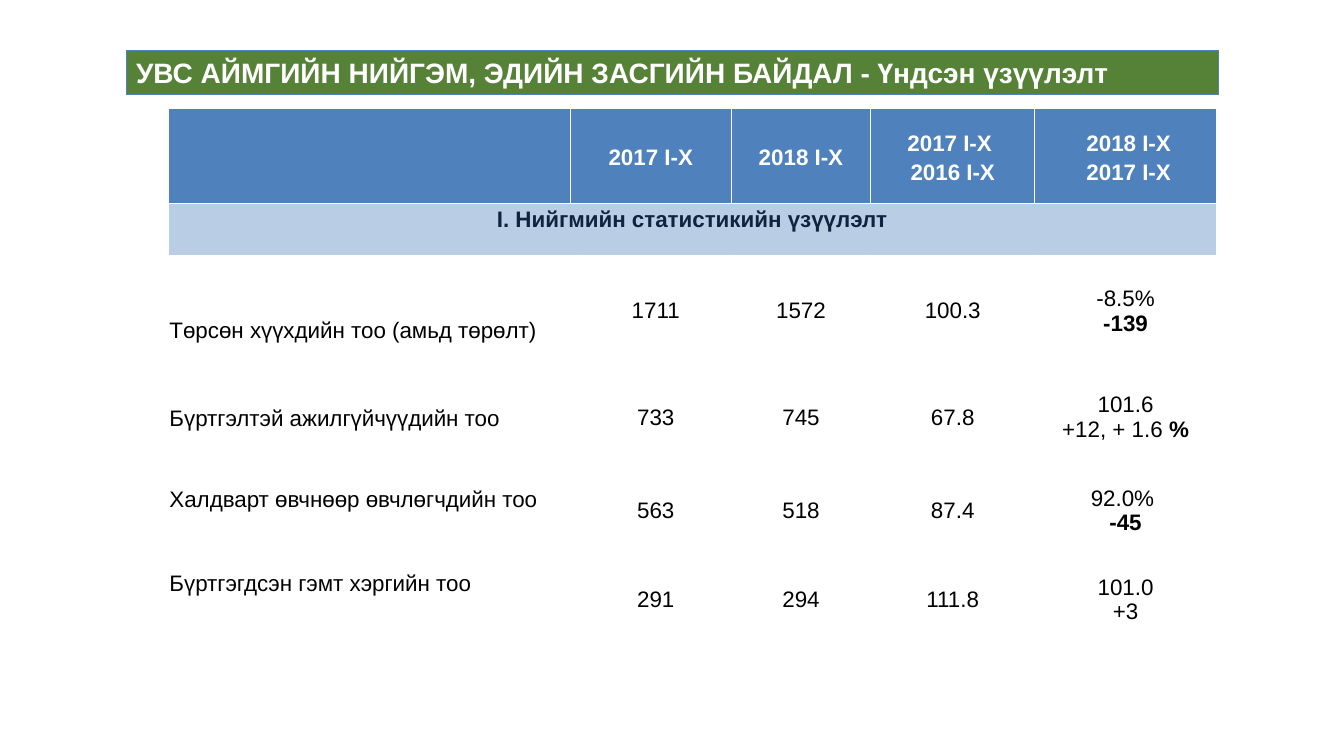
from pptx import Presentation
from pptx.dml.color import RGBColor
from pptx.enum.shapes import MSO_SHAPE
from pptx.enum.text import MSO_ANCHOR, PP_ALIGN
from pptx.util import Cm, Pt

WHITE = RGBColor(0xFF, 0xFF, 0xFF)
BLACK = RGBColor(0, 0, 0)
GREEN = RGBColor(0x55, 0x82, 0x37)
BLUE = RGBColor(0x4F, 0x81, 0xBD)
PALE_BLUE = RGBColor(0xB9, 0xCD, 0xE5)
NAVY = RGBColor(0x0F, 0x24, 0x3E)

TITLE = "УВС АЙМГИЙН НИЙГЭМ, ЭДИЙН ЗАСГИЙН БАЙДАЛ - Үндсэн үзүүлэлт"
SECTION = "I. Нийгмийн статистикийн үзүүлэлт"
COLUMN_WIDTHS = (10.13, 0.25, 3.81, 3.51, 4.14, 4.57)
ROW_HEIGHTS = (2.39, 1.3, 2.79, 2.57, 2.13, 2.36)

# Column index and lines of each heading
HEADINGS = (
    (1, ["2017 I-X"]),
    (3, ["2018 I-X"]),
    (4, ["2017 I-X ", "2016 I-X"]),
    (5, [" 2018 I-X", " 2017 I-X"]),
)
# Label, its top and bottom margins in cm, values, change as lines of (text, bold) runs
INDICATORS = (
    ("Төрсөн хүүхдийн тоо (амьд төрөлт)", 0.97, 0, ("1711", "1572", "100.3"),
     [[("-8.5%", False)], [("-139", True)]]),
    ("Бүртгэлтэй ажилгүйчүүдийн тоо", 0.03, 0, ("733", "745", "67.8"),
     [[("101.6", False)], [("+12, + 1.6 ", False), ("%", True)]]),
    ("Халдварт өвчнөөр өвчлөгчдийн тоо", 0.03, 0.61, ("563", "518", "87.4"),
     [[("92.0% ", False)], [("-45", True)]]),
    ("Бүртгэгдсэн гэмт хэргийн тоо", 0.03, 0.86, ("291", "294", "111.8"),
     [[("101.0", False)], [("+3", False)]]),
)


def style_paragraph(paragraph, size, color, align, spacing=1.0):
    paragraph.alignment = align
    paragraph.line_spacing = spacing
    paragraph.font.name = "Arial"
    paragraph.font.size = Pt(size)
    paragraph.font.color.rgb = color


def add_title(slide):
    shape = slide.shapes.add_shape(
        MSO_SHAPE.RECTANGLE, Cm(3.18), Cm(1.27), Cm(27.53), Cm(1.12))
    shape.shadow.inherit = False
    shape.fill.solid()
    shape.fill.fore_color.rgb = GREEN
    shape.line.color.rgb = BLUE
    shape.line.width = Pt(0.75)
    shape.text_frame.word_wrap = True
    paragraph = shape.text_frame.paragraphs[0]
    paragraph.text = TITLE
    style_paragraph(paragraph, 20, WHITE, PP_ALIGN.JUSTIFY)
    paragraph.font.bold = True


def fill_cell(cell, lines, color=BLACK, align=PP_ALIGN.CENTER, spacing=1.0,
              anchor=MSO_ANCHOR.MIDDLE, side=0.03, top=0.03, bottom=0):
    """Write lines, each a list of (text, bold) runs, with margins in cm."""
    cell.vertical_anchor = anchor
    cell.margin_left = cell.margin_right = Cm(side)
    cell.margin_top, cell.margin_bottom = Cm(top), Cm(bottom)
    frame = cell.text_frame
    for index, line in enumerate(lines):
        paragraph = frame.add_paragraph() if index else frame.paragraphs[0]
        for text, bold in line:
            run = paragraph.add_run()
            run.text = text
            run.font.bold = bold
        style_paragraph(paragraph, 16, color, align, spacing)


def add_empty_table(slide):
    table = slide.shapes.add_table(
        len(ROW_HEIGHTS), len(COLUMN_WIDTHS), Cm(4.24), Cm(2.74),
        Cm(sum(COLUMN_WIDTHS)), Cm(sum(ROW_HEIGHTS))).table
    table.first_row = table.horz_banding = False
    for column, width in zip(table.columns, COLUMN_WIDTHS):
        column.width = Cm(width)
    row_fills = [BLUE, PALE_BLUE] + [WHITE] * len(INDICATORS)
    for row, height, color in zip(table.rows, ROW_HEIGHTS, row_fills):
        row.height = Cm(height)
        for cell in row.cells:
            cell.fill.solid()
            cell.fill.fore_color.rgb = color
    return table


def add_indicator_table(slide):
    table = add_empty_table(slide)
    table.cell(0, 1).merge(table.cell(0, 2))
    for column, lines in HEADINGS:
        fill_cell(table.cell(0, column), [[(line, True)] for line in lines],
                  WHITE, spacing=1.15, side=0.05, top=0)

    table.cell(1, 0).merge(table.cell(1, len(COLUMN_WIDTHS) - 1))
    fill_cell(table.cell(1, 0), [[(SECTION, True)]], NAVY, spacing=1.15,
              anchor=MSO_ANCHOR.TOP, side=0.05, top=0)

    for row, (label, top, bottom, values, change) in enumerate(INDICATORS, start=2):
        table.cell(row, 0).merge(table.cell(row, 1))
        fill_cell(table.cell(row, 0), [[(label, False)]], align=PP_ALIGN.LEFT,
                  spacing=1.07, top=top, bottom=bottom)
        for column, value in enumerate(values, start=2):
            fill_cell(table.cell(row, column), [[(value, False)]])
        fill_cell(table.cell(row, 5), change)


def main():
    presentation = Presentation()
    presentation.slide_width = Cm(33.87)
    presentation.slide_height = Cm(19.05)
    slide = presentation.slides.add_slide(presentation.slide_layouts[6])
    add_title(slide)
    add_indicator_table(slide)
    presentation.save("out.pptx")


if __name__ == "__main__":
    main()
